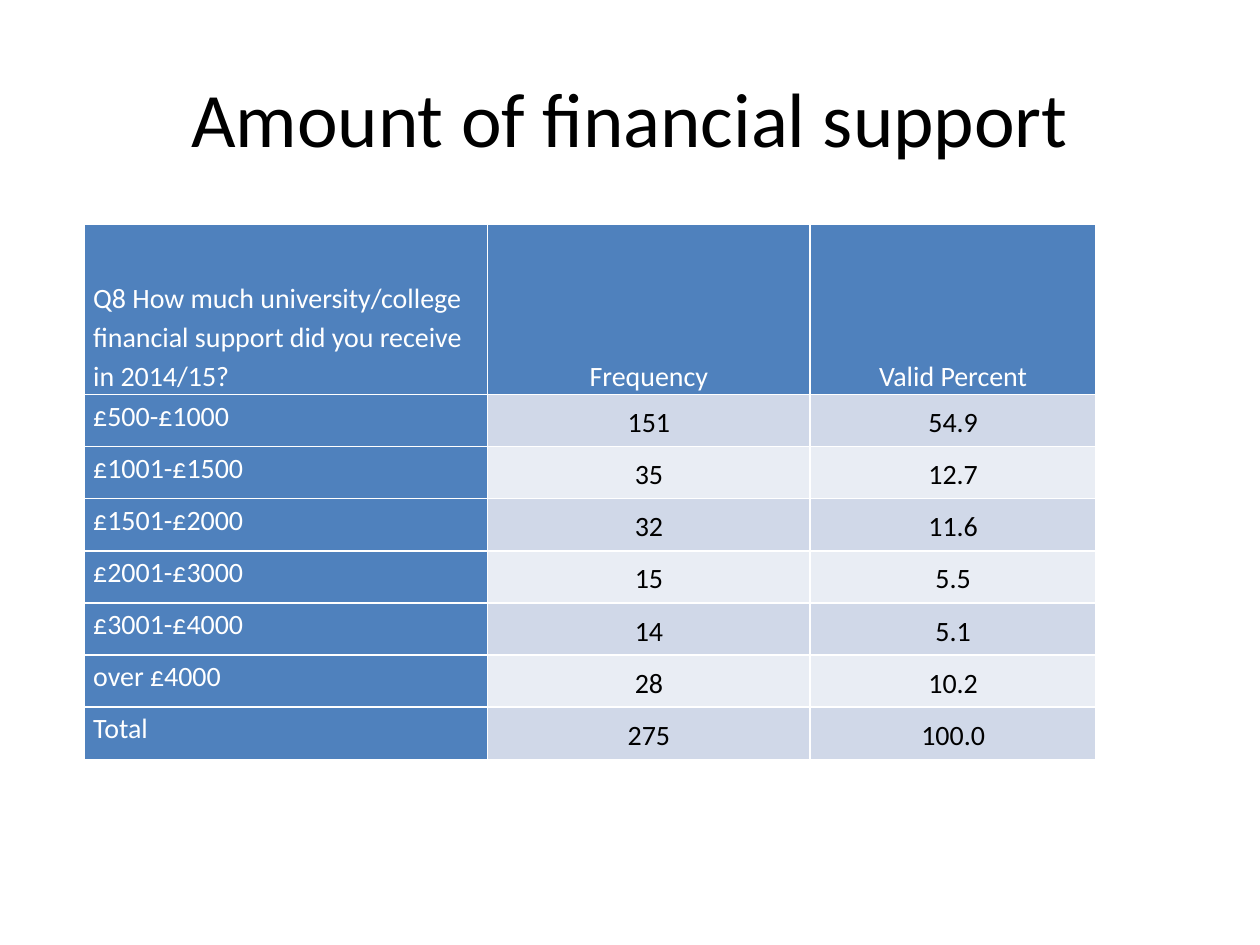
from typing import NamedTuple

from pptx import Presentation
from pptx.dml.color import RGBColor
from pptx.enum.text import MSO_ANCHOR, PP_ALIGN
from pptx.table import _Cell
from pptx.text.text import _Paragraph
from pptx.util import Inches, Pt

FONT = "Calibri"
WHITE = RGBColor(0xFF, 0xFF, 0xFF)
BLACK = RGBColor(0x00, 0x00, 0x00)
HEADING_BLUE = RGBColor(0x4F, 0x81, 0xBD)
BANDS = (RGBColor(0xD0, 0xD8, 0xE8), RGBColor(0xE9, 0xED, 0xF4))

COLUMN_WIDTHS = (3.2, 2.56, 2.27)
HEADER_HEIGHT = 1.35
ROW_HEIGHT = 0.414


class CellStyle(NamedTuple):
    fill: RGBColor
    color: RGBColor
    alignment: PP_ALIGN
    anchor: MSO_ANCHOR


class SupportRow(NamedTuple):
    amount: str
    frequency: str
    valid_percent: str


HEADER = SupportRow(
    "Q8 How much university/college financial support did you receive in 2014/15?",
    "Frequency",
    "Valid Percent",
)
ROWS = (
    SupportRow("£500-£1000", "151", "54.9"),
    SupportRow("£1001-£1500", "35", "12.7"),
    SupportRow("£1501-£2000", "32", "11.6"),
    SupportRow("£2001-£3000", "15", "5.5"),
    SupportRow("£3001-£4000", "14", "5.1"),
    SupportRow("over £4000", "28", "10.2"),
    SupportRow("Total", "275", "100.0"),
)


def add_text(paragraph: _Paragraph, text: str, size: float, color: RGBColor) -> None:
    run = paragraph.add_run()
    run.text = text
    run.font.name = FONT
    run.font.size = Pt(size)
    run.font.bold = False
    run.font.color.rgb = color


def cell_style(row: int, column: int) -> CellStyle:
    alignment = PP_ALIGN.CENTER if column else PP_ALIGN.LEFT
    if row == 0:
        return CellStyle(HEADING_BLUE, WHITE, alignment, MSO_ANCHOR.BOTTOM)
    if column == 0:
        return CellStyle(HEADING_BLUE, WHITE, alignment, MSO_ANCHOR.TOP)
    return CellStyle(BANDS[(row - 1) % 2], BLACK, alignment, MSO_ANCHOR.MIDDLE)


def fill_cell(cell: _Cell, text: str, style: CellStyle) -> None:
    cell.fill.solid()
    cell.fill.fore_color.rgb = style.fill
    cell.vertical_anchor = style.anchor
    cell.margin_left = cell.margin_right = Inches(0.07)
    cell.margin_top = cell.margin_bottom = 0
    paragraph = cell.text_frame.paragraphs[0]
    paragraph.alignment = style.alignment
    paragraph.line_spacing = 1.15
    add_text(paragraph, text, 16, style.color)


def add_support_table(slide) -> None:
    rows = (HEADER, *ROWS)
    height = HEADER_HEIGHT + ROW_HEIGHT * len(ROWS)
    table = slide.shapes.add_table(
        len(rows), len(COLUMN_WIDTHS),
        Inches(0.67), Inches(1.78), Inches(sum(COLUMN_WIDTHS)), Inches(height),
    ).table
    table.first_col = True
    for column, width in zip(table.columns, COLUMN_WIDTHS):
        column.width = Inches(width)
    for row_index, values in enumerate(rows):
        table.rows[row_index].height = Inches(ROW_HEIGHT if row_index else HEADER_HEIGHT)
        for column_index, text in enumerate(values):
            style = cell_style(row_index, column_index)
            fill_cell(table.cell(row_index, column_index), text, style)


def main() -> None:
    presentation = Presentation()
    presentation.slide_width = Inches(10)
    presentation.slide_height = Inches(7.5)
    slide = presentation.slides.add_slide(presentation.slide_layouts[5])

    title = slide.shapes.title
    title.left, title.top = Inches(0.5), Inches(0.3)
    title.width, title.height = Inches(9), Inches(1.25)
    title.text_frame.vertical_anchor = MSO_ANCHOR.MIDDLE
    heading = title.text_frame.paragraphs[0]
    heading.alignment = PP_ALIGN.CENTER
    add_text(heading, "Amount of financial support", 44, BLACK)

    add_support_table(slide)
    presentation.save("out.pptx")


if __name__ == "__main__":
    main()
